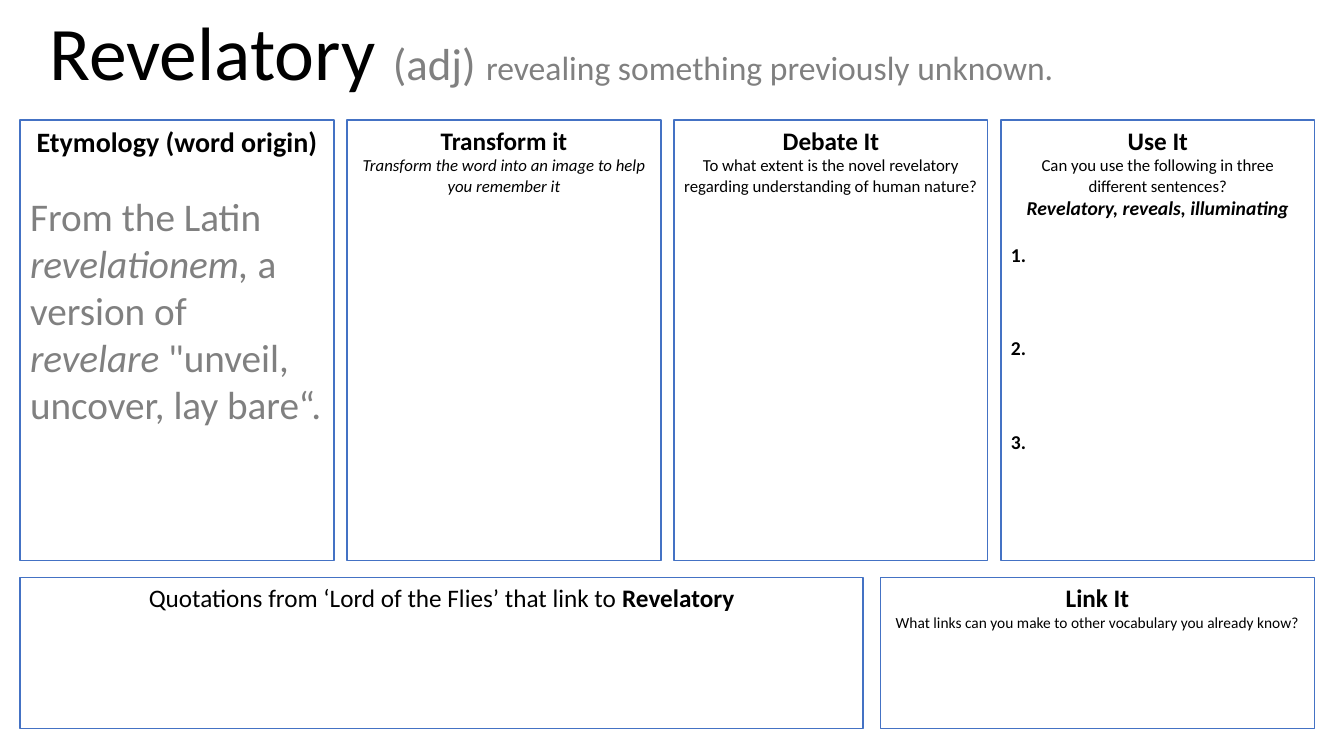
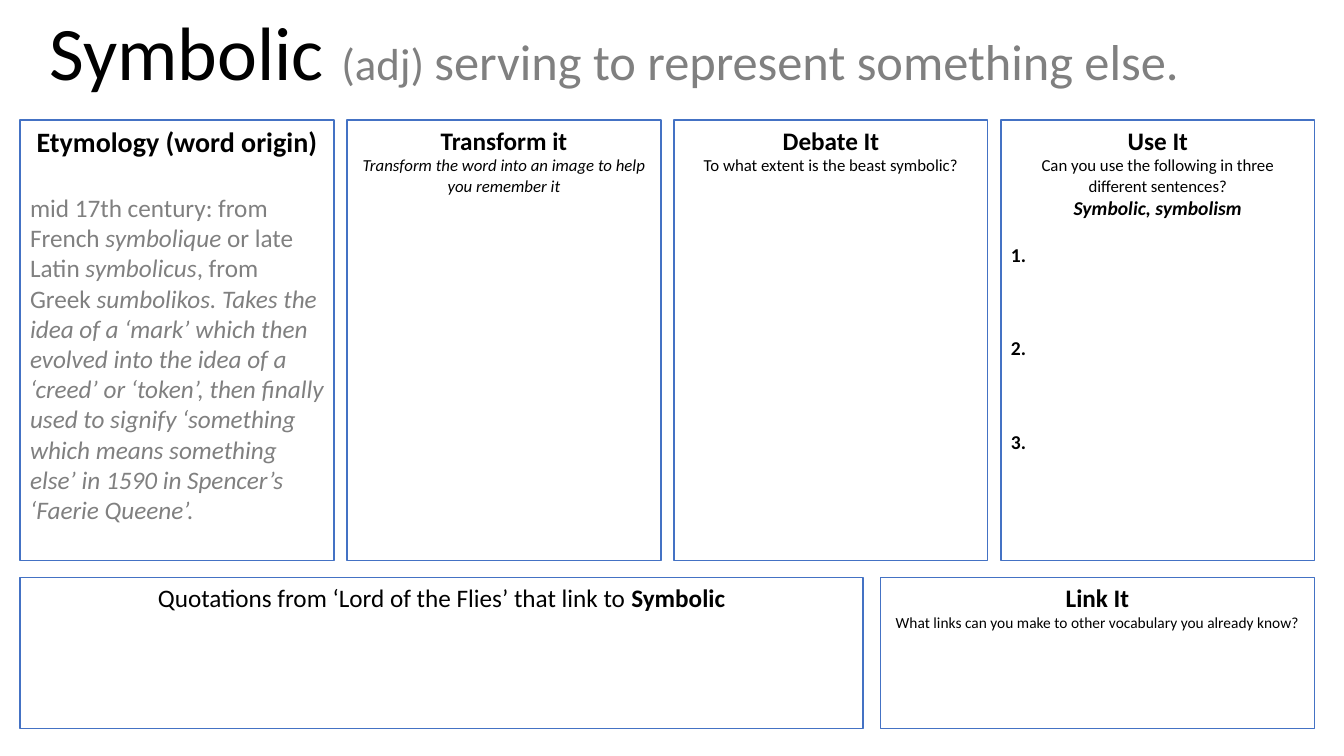
import pptx
import pptx.util
import pptx.dml.color
import pptx.enum.shapes
import pptx.enum.text
import lxml.etree
from dataclasses import dataclass

# Content: text between asterisks is emphasised
WORDS = [
    {
        "word": "Revelatory",
        "meaning": "revealing something previously unknown.",
        "meaning_size": 24,
        "origin": [
            "From the Latin ",
            "*revelationem, *a version of ",
            "*revelare* \"unveil, uncover, lay bare“.",
        ],
        "origin_size": 28,
        "debate": "To what extent is the novel revelatory regarding understanding of human nature?",
        "forms": "Revelatory, reveals, illuminating",
    },
    {
        "word": "Symbolic",
        "meaning": "serving to represent something else.",
        "meaning_size": 36,
        "origin": [
            "mid 17th century: from French *symbolique* or late Latin *symbolicus*, from Greek "
            "*sumbolikos. Takes the idea of a ‘mark’ which then evolved into the idea of a "
            "‘creed’ or ‘token’, then finally used to signify ‘something which means "
            "something else’ in 1590 in Spencer’s ‘Faerie Queene’.*",
        ],
        "origin_size": 18,
        "debate": "To what extent is the beast symbolic?",
        "forms": "Symbolic, symbolism",
    },
]
ORIGIN_HEADING = "Etymology (word origin)"
TRANSFORM = ("Transform it", "Transform the word into an image to help you remember it")
DEBATE_HEADING = "Debate It"
USE = ("Use It", "Can you use the following in three different sentences?")
QUOTATIONS = "Quotations from ‘Lord of the Flies’ that link to *{word}*"
LINK = ("Link It", "What links can you make to other vocabulary you already know?")
SENTENCE_COUNT = 3

# Layout in px, 100 to the inch
PX = 9144
SLIDE_SIZE = (1333, 750)
TITLE_BOX = (39, 0, 1274, 101)
LEFT, RIGHT = 20, 1304
COLUMN_TOP, COLUMN_HEIGHT, COLUMN_GAP, COLUMN_COUNT = 119, 437, 13, 4
BOTTOM_TOP, BOTTOM_HEIGHT, BOTTOM_GAP, LINK_WIDTH = 573, 150, 17, 431
NUMBER_INDENT = 38


@dataclass(frozen=True)
class Theme:
    font: str = "Calibri"
    ink: str = "000000"
    muted: str = "808080"
    paper: str = "FFFFFF"
    border: str = "4472C4"
    border_width: int = 1
    word: int = 54
    word_class: int = 32
    origin_heading: int = 20
    heading: int = 18
    forms: int = 14
    prompt: int = 12
    small_prompt: int = 11
    origin_gap: int = 24
    first_number_gap: int = 17
    number_gap: int = 50


THEME = Theme()
CENTER = pptx.enum.text.PP_ALIGN.CENTER
START = pptx.enum.text.PP_ALIGN.LEFT


def rgb(value):
    return pptx.dml.color.RGBColor.from_string(value)


def emu(box):
    return [round(length * PX) for length in box]


def write(frame, text, size, color=THEME.ink, align=CENTER, before=0,
          bold=False, italic=False, emphasis="italic"):
    """Add one paragraph, using the frame's first one if it is still empty."""
    paragraph = frame.paragraphs[0] if not frame.text else frame.add_paragraph()
    paragraph.alignment = align
    paragraph.space_before = pptx.util.Pt(before)
    font = paragraph.font
    font.name, font.size = THEME.font, pptx.util.Pt(size)
    font.bold, font.italic = bold, italic
    font.color.rgb = rgb(color)
    for index, part in enumerate(text.split("*")):
        if part:
            run = paragraph.add_run()
            run.text = part
            if index % 2:
                setattr(run.font, emphasis, True)
    return paragraph


def number(paragraph):
    properties = paragraph._p.get_or_add_pPr()
    properties.set("marL", str(NUMBER_INDENT * PX))
    properties.set("indent", str(-NUMBER_INDENT * PX))
    bullet = lxml.etree.Element(pptx.oxml.ns.qn("a:buAutoNum"), type="arabicPeriod")
    # Bullets stand before the default run properties
    properties.find(pptx.oxml.ns.qn("a:defRPr")).addprevious(bullet)


def add_panel(slide, box):
    panel = slide.shapes.add_shape(pptx.enum.shapes.MSO_SHAPE.RECTANGLE, *emu(box))
    panel.shadow.inherit = False
    panel.fill.solid()
    panel.fill.fore_color.rgb = rgb(THEME.paper)
    panel.line.color.rgb = rgb(THEME.border)
    panel.line.width = pptx.util.Pt(THEME.border_width)
    frame = panel.text_frame
    frame.word_wrap = True
    frame.vertical_anchor = pptx.enum.text.MSO_ANCHOR.TOP
    return frame


def add_title(slide, entry):
    title = slide.shapes.title
    title.left, title.top, title.width, title.height = emu(TITLE_BOX)
    frame = title.text_frame
    frame.word_wrap = True
    frame.vertical_anchor = pptx.enum.text.MSO_ANCHOR.TOP
    frame.auto_size = pptx.enum.text.MSO_AUTO_SIZE.SHAPE_TO_FIT_TEXT
    paragraph = frame.paragraphs[0]
    paragraph.alignment = START
    paragraph.font.name = THEME.font
    for text, size, color in (
        (entry["word"] + " ", THEME.word, THEME.ink),
        ("(adj) ", THEME.word_class, THEME.muted),
        (entry["meaning"], entry["meaning_size"], THEME.muted),
    ):
        run = paragraph.add_run()
        run.text = text
        run.font.size = pptx.util.Pt(size)
        run.font.color.rgb = rgb(color)


def add_word_slide(presentation, entry):
    slide = presentation.slides.add_slide(presentation.slide_layouts[5])
    add_title(slide, entry)

    # Four equal columns
    width = (RIGHT - LEFT - (COLUMN_COUNT - 1) * COLUMN_GAP) / COLUMN_COUNT
    origin, transform, debate, use = [
        add_panel(slide, (LEFT + column * (width + COLUMN_GAP), COLUMN_TOP, width, COLUMN_HEIGHT))
        for column in range(COLUMN_COUNT)
    ]

    write(origin, ORIGIN_HEADING, THEME.origin_heading, bold=True)
    for index, text in enumerate(entry["origin"]):
        write(origin, text, entry["origin_size"], THEME.muted, START,
              before=0 if index else THEME.origin_gap)

    write(transform, TRANSFORM[0], THEME.heading, bold=True)
    write(transform, TRANSFORM[1], THEME.prompt, italic=True)

    write(debate, DEBATE_HEADING, THEME.heading, bold=True)
    write(debate, entry["debate"], THEME.prompt)

    write(use, USE[0], THEME.heading, bold=True)
    write(use, USE[1], THEME.prompt)
    write(use, entry["forms"], THEME.forms, bold=True, italic=True)
    for index in range(SENTENCE_COUNT):
        gap = THEME.number_gap if index else THEME.first_number_gap
        number(write(use, " ", THEME.forms, align=START, before=gap, bold=True))

    # Bottom row
    link_left = RIGHT - LINK_WIDTH
    quotations = add_panel(
        slide, (LEFT, BOTTOM_TOP, link_left - BOTTOM_GAP - LEFT, BOTTOM_HEIGHT))
    write(quotations, QUOTATIONS.format(word=entry["word"]), THEME.heading, emphasis="bold")
    link = add_panel(slide, (link_left, BOTTOM_TOP, LINK_WIDTH, BOTTOM_HEIGHT))
    write(link, LINK[0], THEME.heading, bold=True)
    write(link, LINK[1], THEME.small_prompt)


def main():
    presentation = pptx.Presentation()
    presentation.slide_width, presentation.slide_height = emu(SLIDE_SIZE)
    for entry in WORDS:
        add_word_slide(presentation, entry)
    presentation.save("out.pptx")


if __name__ == "__main__":
    main()
